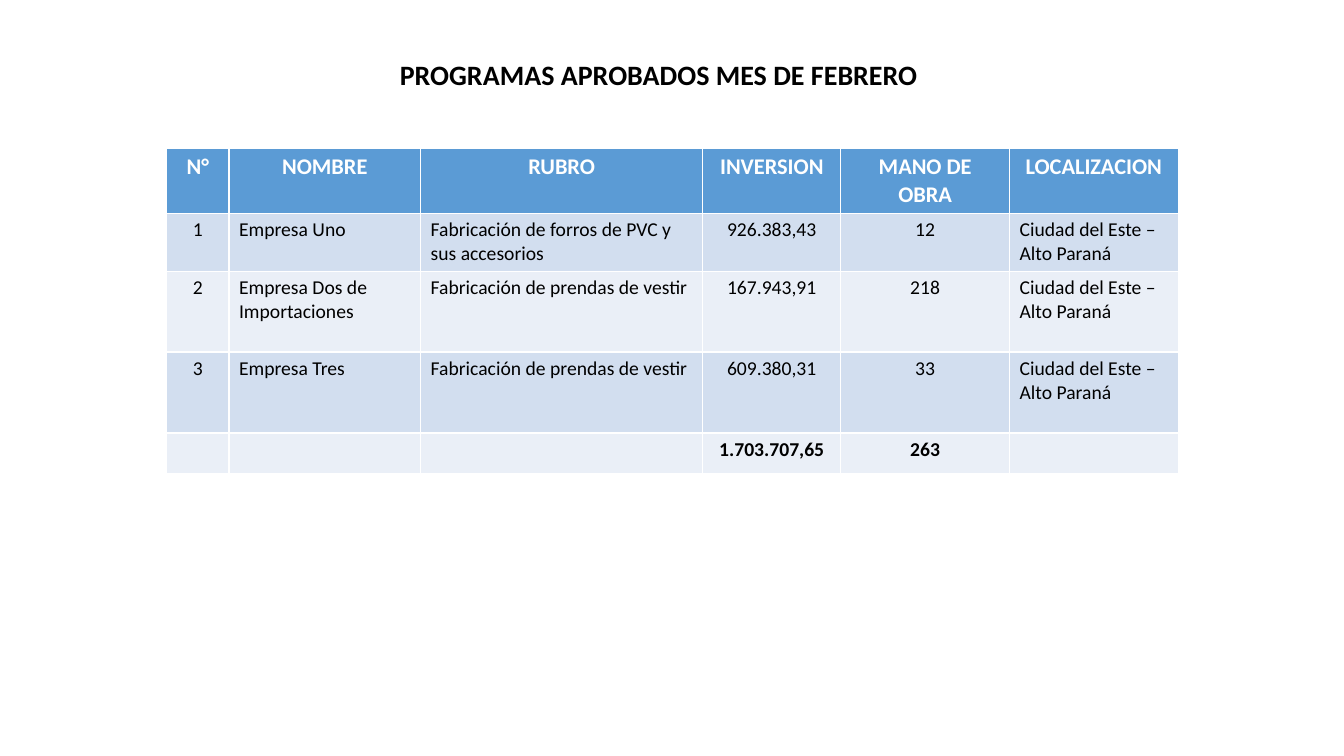
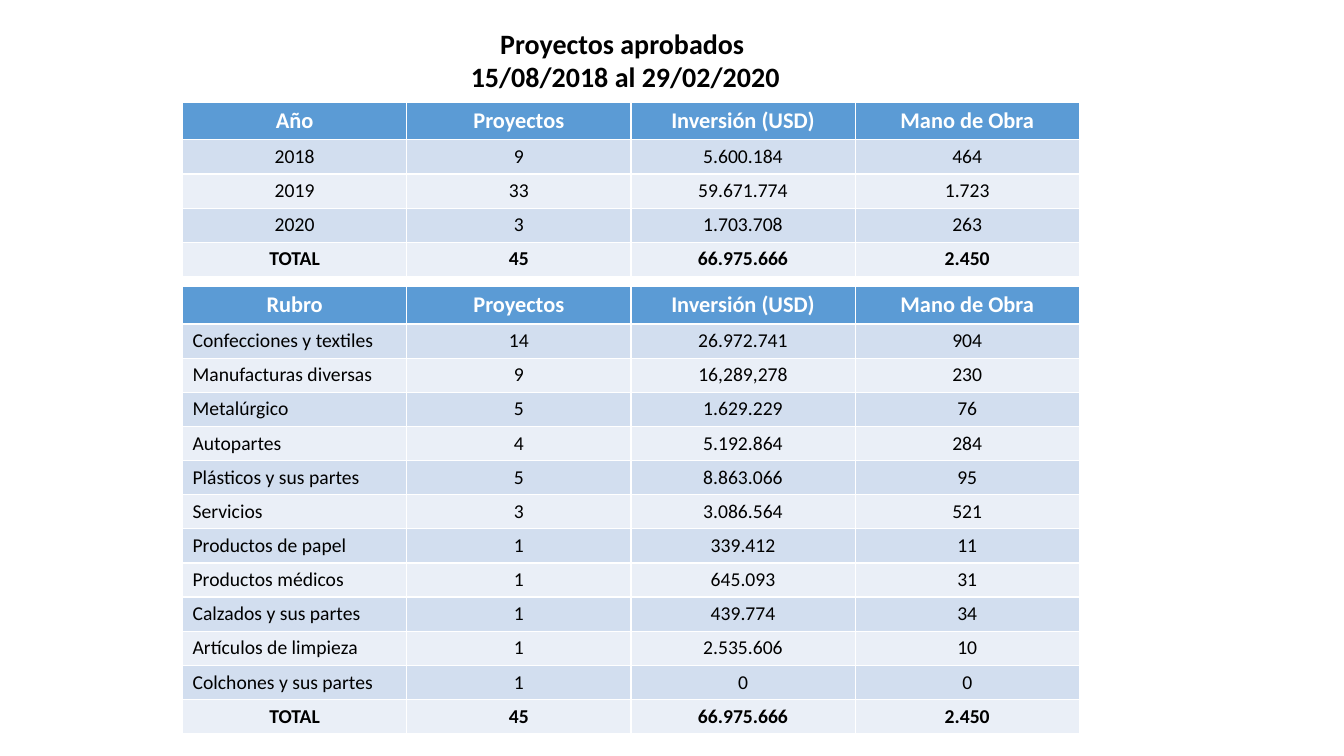
from dataclasses import dataclass

from pptx import Presentation
from pptx.dml.color import RGBColor
from pptx.enum.text import MSO_ANCHOR, PP_ALIGN
from pptx.util import Cm, Pt

LEFT, CENTER = PP_ALIGN.LEFT, PP_ALIGN.CENTER
MIDDLE = MSO_ANCHOR.MIDDLE
TITLE_ONLY = 5


@dataclass(frozen=True)
class Theme:
    font: str = "Calibri"
    title_size: Pt = Pt(20)
    header_size: Pt = Pt(16)
    body_size: Pt = Pt(14)
    text: RGBColor = RGBColor(0x00, 0x00, 0x00)
    header_text: RGBColor = RGBColor(0xFF, 0xFF, 0xFF)
    header_fill: RGBColor = RGBColor(0x5B, 0x9B, 0xD5)
    bands: tuple = (RGBColor(0xD2, 0xDE, 0xEF), RGBColor(0xEA, 0xEF, 0xF7))


theme = Theme()


def write(tf, text, size, color, bold, align):
    tf.text = text
    for p in tf.paragraphs:
        p.alignment = align
        for r in p.runs:
            r.font.name = theme.font
            r.font.size = size
            r.font.bold = bold
            r.font.color.rgb = color


def add_grid(s, left, top, widths, heights, rows, left_columns):
    """Add a banded table in cm; the first row is the header, the last the total."""
    shape = s.shapes.add_table(len(rows), len(widths), Cm(left), Cm(top),
                               Cm(sum(widths)), Cm(sum(heights)))
    table = shape.table
    for column, width in zip(table.columns, widths):
        column.width = Cm(width)
    for i, (row, height) in enumerate(zip(rows, heights)):
        table.rows[i].height = Cm(height)
        header, total = i == 0, i == len(rows) - 1
        size = theme.header_size if header else theme.body_size
        color = theme.header_text if header else theme.text
        for j, text in enumerate(row):
            cell = table.cell(i, j)
            cell.fill.solid()
            cell.fill.fore_color.rgb = theme.header_fill if header else theme.bands[(i - 1) % 2]
            align = LEFT if j in left_columns and not (header or total) else CENTER
            if text:
                write(cell.text_frame, text, size, color, header or total, align)


prs = Presentation()
prs.slide_width, prs.slide_height = Cm(33.87), Cm(19.05)

titles = [
    ("PROGRAMAS APROBADOS MES DE FEBRERO", (8.6, 1.3, 16, 1.12)),
    ("Proyectos aprobados \n15/08/2018 al 29/02/2020", (9.27, 0.53, 12.98, 1.96)),
]
slides = []
for text, box in titles:
    s = prs.slides.add_slide(prs.slide_layouts[TITLE_ONLY])
    title = s.shapes.title
    title.left, title.top, title.width, title.height = [Cm(v) for v in box]
    title.text_frame.vertical_anchor = MIDDLE
    write(title.text_frame, text, theme.title_size, theme.text, True, CENTER)
    slides.append(s)
february, summary = slides

# Programmes approved in February
place = "Ciudad del Este – Alto Paraná"
garments = "Fabricación de prendas de vestir"
programs = [
    ("N°", "NOMBRE", "RUBRO", "INVERSION", "MANO DE OBRA", "LOCALIZACION"),
    ("1", "Empresa Uno", "Fabricación de forros de PVC y sus accesorios", "926.383,43", "12", place),
    ("2", "Empresa Dos de Importaciones", garments, "167.943,91", "218", place),
    ("3", "Empresa Tres", garments, "609.380,31", "33", place),
    ("", "", "", "1.703.707,65", "263", ""),
]
add_grid(february, 4.2, 3.74, [1.57, 4.83, 7.11, 3.48, 4.25, 4.25],
         [1.57, 1.45, 2.04, 2.04, 1.03], programs, left_columns=(1, 2, 5))

# Projects by year and by sector
measures = ("Proyectos", "Inversión (USD)", "Mano de Obra")
total = ("TOTAL", "45", "66.975.666", "2.450")
years = [
    ("Año", *measures),
    ("2018", "9", "5.600.184", "464"),
    ("2019", "33", "59.671.774", "1.723"),
    ("2020", "3", "1.703.708", "263"),
    total,
]
sectors = [
    ("Rubro", *measures),
    ("Confecciones y textiles", "14", "26.972.741", "904"),
    ("Manufacturas diversas", "9", "16,289,278", "230"),
    ("Metalúrgico", "5", "1.629.229", "76"),
    ("Autopartes", "4", "5.192.864", "284"),
    ("Plásticos y sus partes", "5", "8.863.066", "95"),
    ("Servicios", "3", "3.086.564", "521"),
    ("Productos de papel", "1", "339.412", "11"),
    ("Productos médicos", "1", "645.093", "31"),
    ("Calzados y sus partes", "1", "439.774", "34"),
    ("Artículos de limpieza", "1", "2.535.606", "10"),
    ("Colchones y sus partes", "1", "0", "0"),
    total,
]
for top, rows, left_columns in [(2.58, years, ()), (7.22, sectors, (0,))]:
    add_grid(summary, 4.6, top, [5.65] * 4, [0.86] * len(rows), rows, left_columns)

prs.save("out.pptx")
